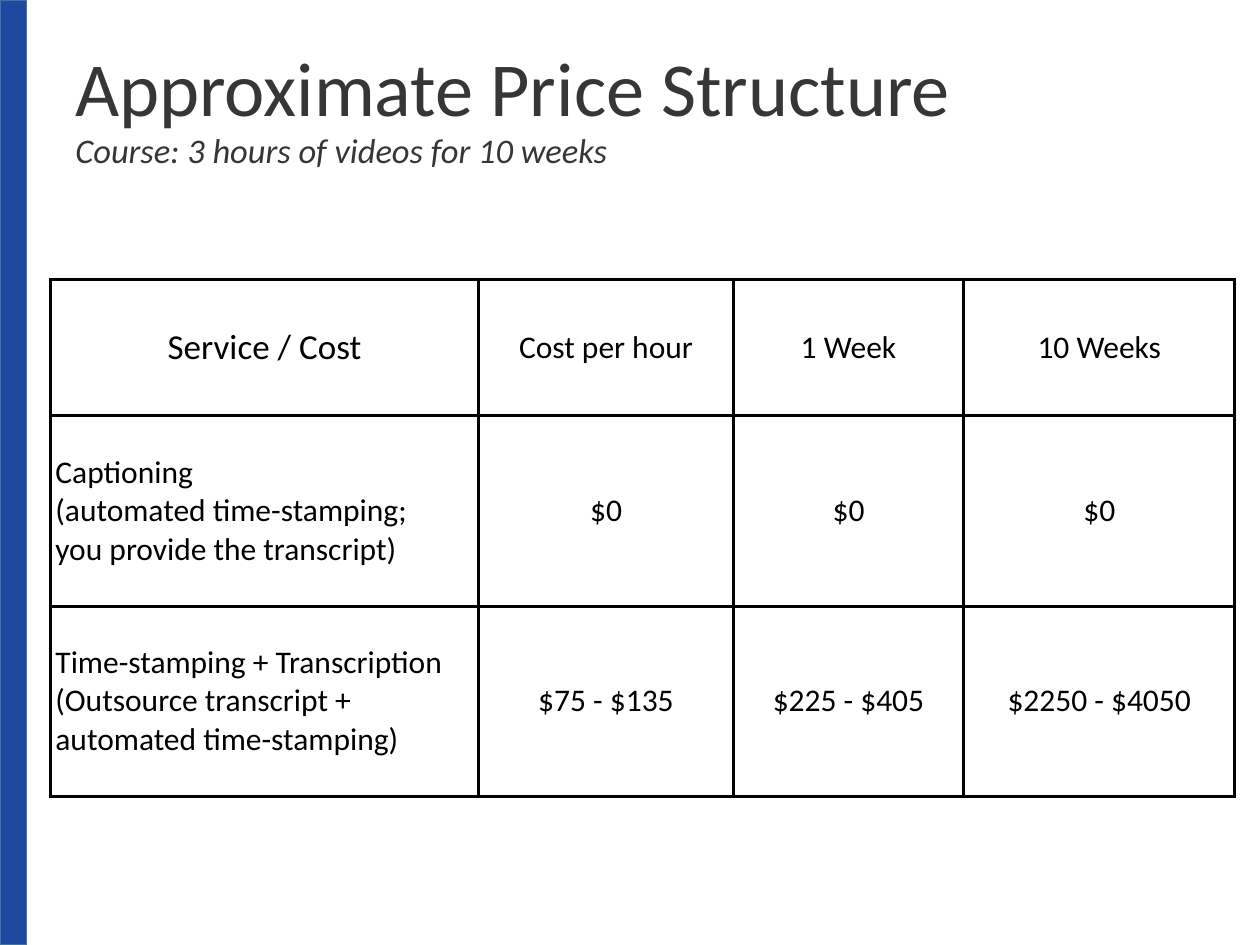
import pptx
import pptx.util
import pptx.dml.color
import pptx.enum.shapes
import pptx.enum.text
import pptx.oxml
import pptx.oxml.ns

Inches = pptx.util.Inches
Pt = pptx.util.Pt
PP_ALIGN = pptx.enum.text.PP_ALIGN
MIDDLE = pptx.enum.text.MSO_ANCHOR.MIDDLE

COLORS = {"band": "1D4AA0", "band_edge": "43739E", "title": "373535", "ink": "000000"}


def rgb(name):
    return pptx.dml.color.RGBColor.from_string(COLORS[name])


def add_lines(paragraph, lines, color):
    for index, (text, size, italic) in enumerate(lines):
        if index:
            paragraph.add_line_break()
        run = paragraph.add_run()
        run.text = text
        run.font.name = "Calibri"
        run.font.size = Pt(size)
        run.font.italic = italic
        run.font.color.rgb = rgb(color)


deck = pptx.Presentation()
deck.slide_width = Inches(10)
deck.slide_height = Inches(7.5)
slide = deck.slides.add_slide(deck.slide_layouts[6])

side_band = slide.shapes.add_shape(
    pptx.enum.shapes.MSO_SHAPE.RECTANGLE, Inches(0), Inches(0), Inches(0.21), Inches(7.5)
)
side_band.shadow.inherit = False
side_band.fill.solid()
side_band.fill.fore_color.rgb = rgb("band")
side_band.line.color.rgb = rgb("band_edge")
side_band.line.width = Pt(1)

heading = slide.shapes.add_textbox(Inches(0.5), Inches(0.08), Inches(9), Inches(1.6)).text_frame
heading.word_wrap = True
heading.vertical_anchor = MIDDLE
heading.margin_left = heading.margin_right = Inches(0.1)
heading.margin_top = heading.margin_bottom = Inches(0.06)
heading.paragraphs[0].line_spacing = 0.9
add_lines(
    heading.paragraphs[0],
    [
        ("Approximate Price Structure", 43.6, False),
        ("Course: 3 hours of videos for 10 weeks", 19.7, True),
    ],
    "title",
)

column_widths = [3.4, 2.02, 1.83, 2.15]
row_heights = [1.08, 1.51, 1.51]
price_rows = [
    [[["Service / Cost"]], [["Cost per hour"]], [["1 Week"]], [["10 Weeks"]]],
    [
        [["Captioning", "(automated time-stamping;", "you provide the transcript)"]],
        [["$0"]],
        [["$0"]],
        [["$0"]],
    ],
    [
        [["Time-stamping + Transcription"], ["(Outsource transcript + automated time-stamping)"]],
        [["$75 - $135"]],
        [["$225 - $405"]],
        [["$2250 - $4050"]],
    ],
]

prices = slide.shapes.add_table(
    len(row_heights), len(column_widths), Inches(0.4), Inches(2.22), Inches(9.4), Inches(4.1)
).table
prices.first_row = False
prices.horz_banding = False
for column, width in zip(prices.columns, column_widths):
    column.width = Inches(width)
for row, height in zip(prices.rows, row_heights):
    row.height = Inches(height)

for row_index, price_row in enumerate(price_rows):
    for column_index, paragraphs in enumerate(price_row):
        cell = prices.cell(row_index, column_index)
        cell.vertical_anchor = MIDDLE
        margin = Inches(0.05 if row_index and column_index else 0.04)
        cell.margin_left = cell.margin_right = margin
        cell.margin_top = cell.margin_bottom = margin
        cell_properties = cell._tc.get_or_add_tcPr()
        for side in "LRTB":
            cell_properties.append(
                pptx.oxml.parse_xml(
                    f'<a:ln{side} {pptx.oxml.ns.nsdecls("a")} w="{Pt(2)}"><a:solidFill>'
                    f'<a:srgbClr val="{COLORS["ink"]}"/></a:solidFill></a:ln{side}>'
                )
            )
        cell.fill.background()

        size = 20 if row_index == column_index == 0 else 18
        is_service = row_index > 0 and column_index == 0
        for index, lines in enumerate(paragraphs):
            frame = cell.text_frame
            paragraph = frame.add_paragraph() if index else frame.paragraphs[0]
            paragraph.alignment = PP_ALIGN.LEFT if is_service else PP_ALIGN.CENTER
            add_lines(paragraph, [(line, size, False) for line in lines], "ink")

deck.save("out.pptx")
